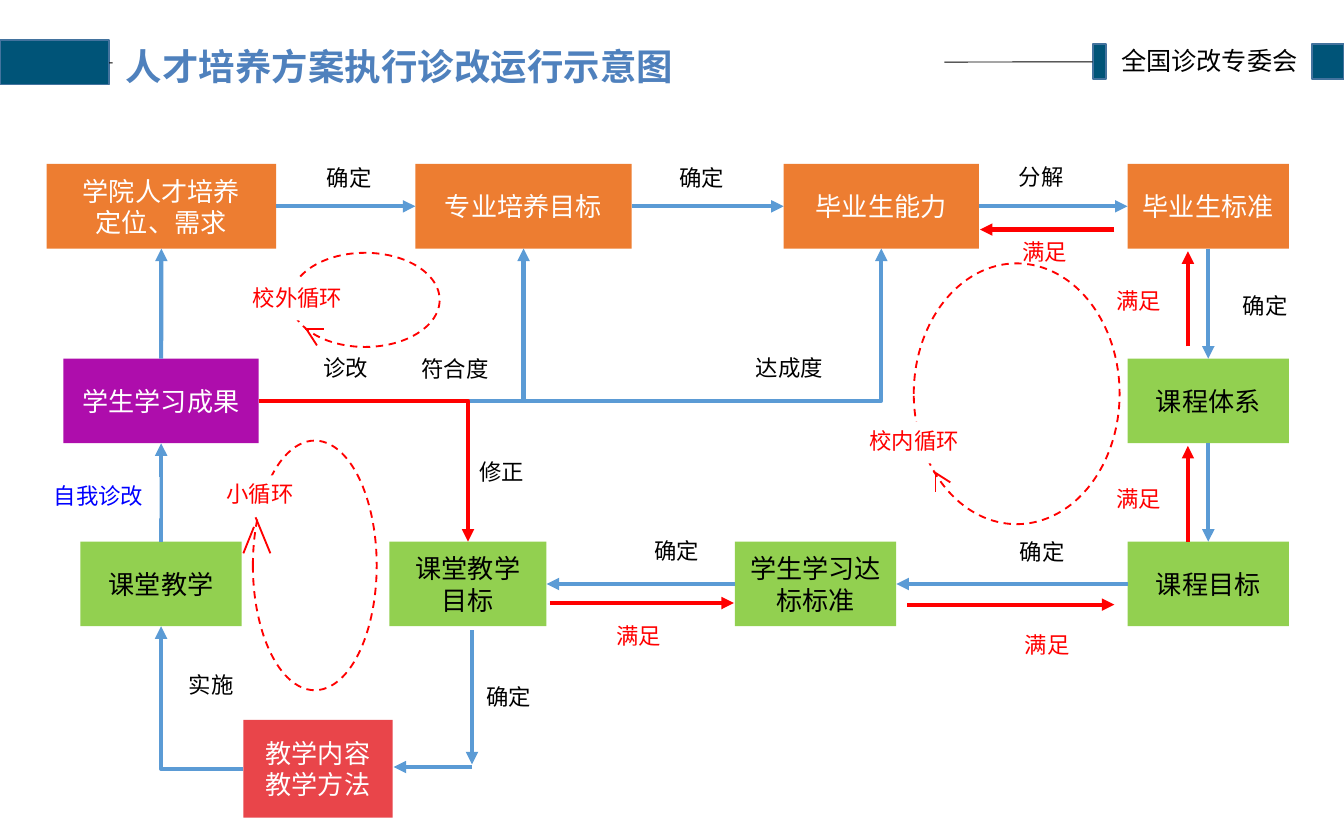
from lxml import etree
from pptx import Presentation
from pptx.dml.color import RGBColor
from pptx.enum.dml import MSO_LINE
from pptx.enum.shapes import MSO_CONNECTOR, MSO_SHAPE
from pptx.enum.text import MSO_ANCHOR, MSO_AUTO_SIZE, PP_ALIGN
from pptx.oxml.ns import qn
from pptx.util import Cm, Pt

THEME = {
    "font": "Noto Sans CJK SC",
    "color": {
        "white": "FFFFFF", "black": "000000", "red": "FF0000", "blue": "0000FF",
        "orange": "ED7D31", "green": "92D050", "purple": "AE0DAC", "coral": "E9454A",
        "teal": "005478", "edge": "43739E", "title": "4F81BD", "flow": "5B9BD5",
    },
    "size": {"title": 19.5, "header": 13.5, "node": 14, "label": 12},
    "width": {"flow": 2.25, "edge": 1, "rule": 0.5},
}

TITLE = ("人才培养方案执行诊改运行示意图", (2.13, 0.66, 15.72, 1.27))
HEADER = ("全国诊改专委会", (20.96, 0.76, 3.89, 0.84))
HEADER_RULE = (20.65, 1.17, 2.06, 1.19)
HEADER_BLOCKS = [(24.79, 0.84, 0.61, 0.66), (20.65, 0.84, 0.25, 0.66), (0, 0.76, 2.06, 0.84)]

ROWS = {"goal": (3.1, 1.6), "result": (6.78, 1.6), "class": (10.24, 1.6), "content": (13.61, 1.85)}
NODES = {
    "college": ("学院人才培养\n定位、需求", "goal", 0.88, 4.34, "orange", "white"),
    "major": ("专业培养目标", "goal", 7.85, 4.09, "orange", "white"),
    "ability": ("毕业生能力", "goal", 14.81, 3.69, "orange", "white"),
    "standard": ("毕业生标准", "goal", 21.31, 3.05, "orange", "white"),
    "outcome": ("学生学习成果", "result", 1.2, 3.69, "purple", "white"),
    "system": ("课程体系", "result", 21.31, 3.05, "green", "black"),
    "teaching": ("课堂教学", "class", 1.52, 3.05, "green", "black"),
    "class_goal": ("课堂教学\n目标", "class", 7.36, 2.97, "green", "black"),
    "attainment": ("学生学习达标标准", "class", 13.89, 3.05, "green", "black"),
    "course_goal": ("课程目标", "class", 21.31, 3.05, "green", "black"),
    "method": ("教学内容\n教学方法", "content", 4.6, 2.82, "coral", "white"),
}
SITES = {"top": 0, "left": 1, "bottom": 2, "right": 3}
LINKS = [
    ("college", "right", "major", "left", "flow"),
    ("major", "right", "ability", "left", "flow"),
    ("ability", "right", "standard", "left", "flow"),
    ("standard", "bottom", "system", "top", "flow"),
    ("system", "bottom", "course_goal", "top", "flow"),
    ("course_goal", "left", "attainment", "right", "flow"),
    ("attainment", "left", "class_goal", "right", "flow"),
    ("teaching", "top", "outcome", "bottom", "flow"),
    ("outcome", "top", "college", "bottom", "flow"),
    ("outcome", "right", "major", "bottom", "flow"),
    ("outcome", "right", "ability", "bottom", "flow"),
    ("outcome", "right", "class_goal", "top", "red"),
    ("method", "left", "teaching", "bottom", "flow"),
]
FREE_ARROWS = [
    (8.92, 11.91, 8.92, 14.45, "flow"),
    (8.92, 14.5, 7.44, 14.5, "flow"),
    (22.45, 10.24, 22.45, 8.43, "red"),
    (22.45, 6.55, 22.45, 4.75, "red"),
    (21.06, 4.34, 18.52, 4.34, "red"),
    (17.15, 11.43, 21.06, 11.43, "red"),
    (10.39, 11.4, 13.87, 11.4, "red"),
]
LOOPS = [(5.49, 4.78, 2.82, 1.78), (17.27, 4.98, 3.89, 4.93), (4.78, 8.33, 2.34, 4.72)]
LOOP_TICKS = [
    (17.65, 8.92, 17.96, 9.12), (17.68, 8.94, 17.68, 9.3),
    (4.83, 9.78, 5.11, 10.46), (4.6, 10.46, 4.8, 9.96),
    (5.77, 6.22, 6.12, 6.22), (5.79, 6.22, 5.99, 6.53),
]
LABEL_HEIGHT = 0.78
LABELS = [
    ("确定", 5.51, 3.02, 2.18, "black", None),
    ("确定", 12.17, 3.02, 2.18, "black", "white"),
    ("分解", 18.59, 3.0, 2.18, "black", None),
    ("确定", 23.04, 5.44, 1.75, "black", None),
    ("诊改", 5.44, 6.6, 2.18, "black", None),
    ("符合度", 7.19, 6.63, 2.82, "black", None),
    ("达成度", 13.51, 6.6, 2.82, "black", None),
    ("修正", 8.61, 8.57, 1.75, "black", None),
    ("确定", 18.82, 10.08, 1.75, "black", None),
    ("确定", 11.91, 10.06, 1.75, "black", None),
    ("实施", 3.12, 12.6, 1.75, "black", None),
    ("确定", 8.74, 12.83, 1.75, "black", None),
    ("满足", 18.92, 11.84, 1.75, "red", None),
    ("满足", 20.65, 9.09, 1.75, "red", None),
    ("满足", 20.65, 5.33, 1.75, "red", None),
    ("满足", 18.87, 4.42, 1.75, "red", None),
    ("满足", 11.2, 11.68, 1.75, "red", None),
    ("校内循环", 15.82, 7.98, 2.92, "red", "white"),
    ("校外循环", 4.19, 5.28, 2.87, "red", "white"),
    ("小循环", 3.48, 8.99, 2.87, "red", "white"),
    ("自我诊改", 0.71, 9.02, 2.31, "blue", "white"),
]


def color(name):
    return RGBColor.from_string(THEME["color"][name])


def place(bounds):
    return [Cm(value) for value in bounds]


def apply(target, values):
    for name, value in values.items():
        setattr(target, name, value)


def fill_shape(shape, fill):
    if fill:
        shape.fill.solid()
        shape.fill.fore_color.rgb = color(fill)
    else:
        shape.fill.background()


def write(box, text, role, ink, bold=False, align=PP_ALIGN.CENTER, **frame_values):
    frame = box.text_frame
    frame.text = text
    defaults = {"word_wrap": True, "margin_left": Cm(0.18), "margin_right": Cm(0.18),
                "margin_top": Cm(0.09), "margin_bottom": Cm(0.09)}
    apply(frame, defaults | frame_values)
    for para in frame.paragraphs:
        para.alignment = align
        for span in para.runs:
            apply(span.font, {"name": THEME["font"], "size": Pt(THEME["size"][role]), "bold": bold})
            span.font.color.rgb = color(ink)
            etree.SubElement(span.font._element, qn("a:ea"), typeface=THEME["font"])


def add_block(page, bounds, fill, edge=None, kind=MSO_SHAPE.RECTANGLE):
    block = page.shapes.add_shape(kind, *place(bounds))
    block.shadow.inherit = False
    fill_shape(block, fill)
    if edge:
        block.line.color.rgb = color(edge)
        block.line.width = Pt(THEME["width"]["edge"])
    else:
        block.line.fill.background()
    return block


def add_line(page, points, ink, weight, arrow=False, elbow=False):
    line = page.shapes.add_connector(MSO_CONNECTOR.STRAIGHT, *place(points))
    line.line.color.rgb = color(ink)
    line.line.width = Pt(THEME["width"][weight])
    properties = line._element.spPr
    if arrow:
        etree.SubElement(properties.find(qn("a:ln")), qn("a:tailEnd"), type="triangle")
    if elbow:
        properties.find(qn("a:prstGeom")).set("prst", "bentConnector2")
    etree.SubElement(properties, qn("a:effectLst"))
    return line


def add_heading(page):
    for bounds in HEADER_BLOCKS:
        add_block(page, bounds, "teal", "edge")
    add_line(page, HEADER_RULE, "black", "rule")
    text, bounds = HEADER
    box = page.shapes.add_textbox(*place(bounds))
    write(box, text, "header", "black", align=PP_ALIGN.LEFT, word_wrap=False, margin_left=Cm(0.24))
    text, bounds = TITLE
    title = page.shapes.title
    apply(title, dict(zip(("left", "top", "width", "height"), place(bounds))))
    fill_shape(title, "white")
    write(title, text, "title", "title", bold=True, align=PP_ALIGN.LEFT,
          vertical_anchor=MSO_ANCHOR.MIDDLE, auto_size=MSO_AUTO_SIZE.NONE,
          margin_left=Cm(0.25), margin_right=Cm(0.25))
    title.text_frame.paragraphs[0].line_spacing = 0.9
    page.shapes.element.append(title.element)


def add_flow(page):
    for bounds in LOOPS:
        loop = add_block(page, bounds, None, "red", MSO_SHAPE.OVAL)
        loop.line.dash_style = MSO_LINE.DASH
    nodes = {}
    for name, (text, row, left, width, fill, ink) in NODES.items():
        top, height = ROWS[row]
        nodes[name] = add_block(page, (left, top, width, height), fill)
        write(nodes[name], text, "node", ink, vertical_anchor=MSO_ANCHOR.MIDDLE)
    for source, exit_side, target, entry_side, ink in LINKS:
        elbow = exit_side in ("left", "right") and entry_side in ("top", "bottom")
        link = add_line(page, (0, 0, 0, 0), ink, "flow", arrow=True, elbow=elbow)
        link.begin_connect(nodes[source], SITES[exit_side])
        link.end_connect(nodes[target], SITES[entry_side])
    for *points, ink in FREE_ARROWS:
        add_line(page, points, ink, "flow", arrow=True)
    for text, left, top, width, ink, fill in LABELS:
        label = page.shapes.add_textbox(*place((left, top, width, LABEL_HEIGHT)))
        fill_shape(label, fill)
        write(label, text, "label", ink, auto_size=MSO_AUTO_SIZE.SHAPE_TO_FIT_TEXT)
    for points in LOOP_TICKS:
        add_line(page, points, "red", "edge")


def main():
    deck = Presentation()
    apply(deck, {"slide_width": Cm(25.4), "slide_height": Cm(15.88)})
    page = deck.slides.add_slide(deck.slide_layouts[5])
    add_heading(page)
    add_flow(page)
    deck.save("out.pptx")


if __name__ == "__main__":
    main()
